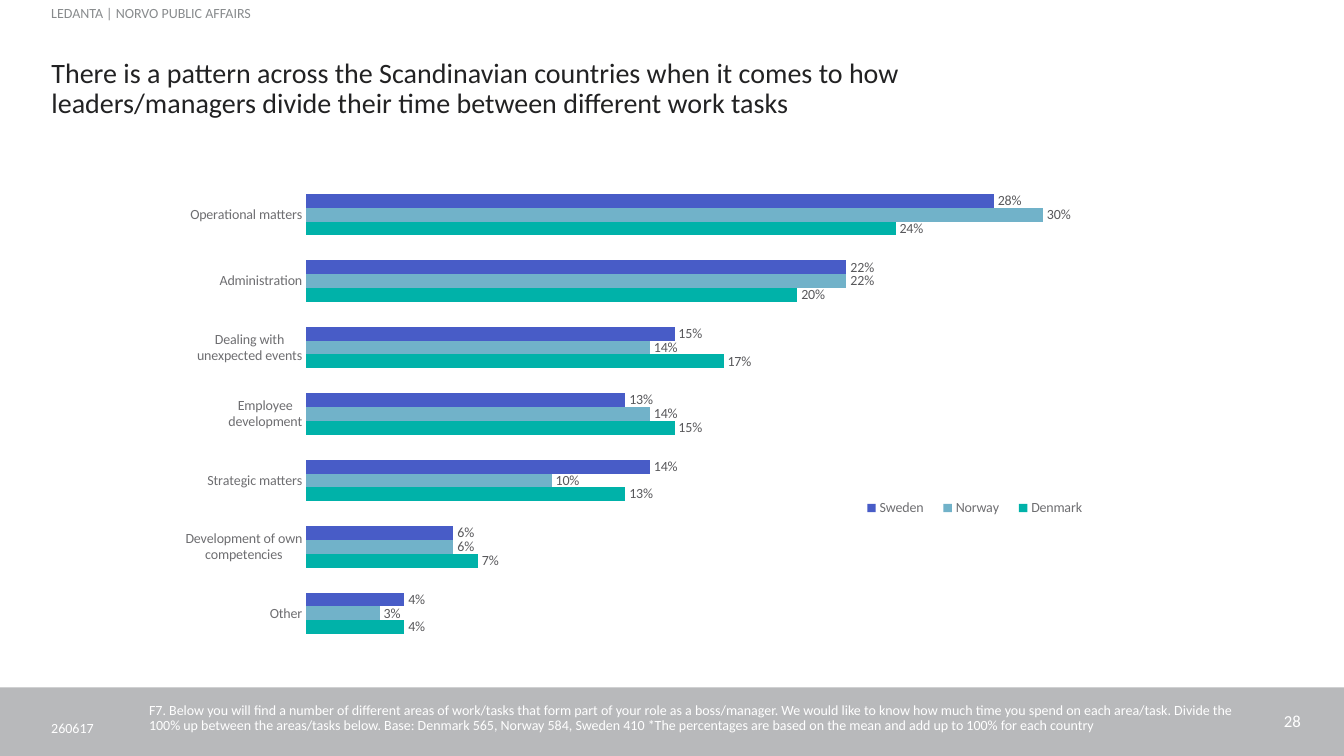
from dataclasses import dataclass

from lxml.etree import SubElement
from pptx import Presentation
from pptx.chart.data import CategoryChartData
from pptx.dml.color import RGBColor
from pptx.enum.chart import XL_CHART_TYPE, XL_LABEL_POSITION, XL_LEGEND_POSITION, XL_TICK_MARK
from pptx.enum.shapes import MSO_SHAPE
from pptx.enum.text import MSO_ANCHOR, PP_ALIGN
from pptx.oxml.ns import qn
from pptx.util import Inches, Pt

TITLE = ("There is a pattern across the Scandinavian countries when it comes to how "
         "leaders/managers divide their time between different work tasks")
NOTE = ("F7. Below you will find a number of different areas of work/tasks that form part of "
        "your role as a boss/manager. We would like to know how much time you spend on each "
        "area/task. Divide the 100% up between the areas/tasks below. Base: Denmark 565, "
        "Norway 584, Sweden 410 *The percentages are based on the mean and add up to 100% "
        "for each country")
HEADER = "LEDANTA | NORVO PUBLIC AFFAIRS"
DATE = "260617"
PAGE = "28"

TASKS = ["Other", "Development of own competencies", "Strategic matters",
         "Employee development", "Dealing with unexpected events",
         "Administration", "Operational matters"]
SHARES = {
    "Denmark": (0.04, 0.07, 0.13, 0.15, 0.17, 0.20, 0.24),
    "Norway": (0.03, 0.06, 0.10, 0.14, 0.14, 0.22, 0.30),
    "Sweden": (0.04, 0.06, 0.14, 0.13, 0.15, 0.22, 0.28),
}


@dataclass(frozen=True)
class Theme:
    font: str = "Calibri"
    dark: str = "222223"
    label: str = "58585B"
    axis: str = "6E6E71"
    head: str = "888B8D"
    band: str = "B8B9BB"
    white: str = "FFFFFF"
    bars: tuple = ("00B2A9", "71B2C9", "485CC7")
    small: int = 10
    page: int = 12
    title: int = 20


LOOK = Theme()


def color(code):
    return RGBColor.from_string(code)


def style(font, size, code):
    font.name = LOOK.font
    font.size = Pt(size)
    font.color.rgb = color(code)


def fill_text(shape, text, size, code, align=PP_ALIGN.LEFT, anchor=MSO_ANCHOR.TOP, space=1):
    frame = shape.text_frame
    frame.word_wrap = True
    frame.vertical_anchor = anchor
    frame.text = text
    para = frame.paragraphs[0]
    para.alignment = align
    para.line_spacing = space
    style(para.font, size, code)


def add_text(slide, box, *args, **kwargs):
    fill_text(slide.shapes.add_textbox(*map(Inches, box)), *args, **kwargs)


def set_layout(part, after, box, inner=False):
    """Place a chart part by fractions of the chart area."""
    for old in part.findall(qn("c:layout")):
        part.remove(old)
    layout = SubElement(part, qn("c:layout"))
    if after is None:
        part.insert(0, layout)
    else:
        part.find(qn(after)).addnext(layout)
    manual = SubElement(layout, qn("c:manualLayout"))
    rules = [("layoutTarget", "inner")] if inner else []
    rules += [("xMode", "edge"), ("yMode", "edge"), *zip("xywh", box)]
    for name, value in rules:
        SubElement(manual, qn(f"c:{name}")).set("val", str(value))


def add_bars(slide):
    data = CategoryChartData(number_format="0%")
    data.categories = TASKS
    for name, values in SHARES.items():
        data.add_series(name, values)
    box = map(Inches, (1.84, 1.19, 10.16, 5.5))
    chart = slide.shapes.add_chart(XL_CHART_TYPE.BAR_CLUSTERED, *box, data).chart
    style(chart.font, LOOK.small, LOOK.dark)
    chart.has_title = False

    plot = chart.plots[0]
    plot.gap_width = 182
    plot.overlap = 0
    plot.vary_by_categories = False
    for series, code in zip(plot.series, LOOK.bars):
        series.format.fill.solid()
        series.format.fill.fore_color.rgb = color(code)
        labels = series.data_labels
        labels.show_value = True
        labels.position = XL_LABEL_POSITION.OUTSIDE_END
        labels.number_format = "0%"
        labels.number_format_is_linked = False
        style(labels.font, LOOK.small, LOOK.label)

    tasks = chart.category_axis
    tasks.major_tick_mark = XL_TICK_MARK.NONE
    tasks.format.line.fill.background()
    style(tasks.tick_labels.font, LOOK.small, LOOK.axis)
    scale = chart.value_axis
    scale.minimum_scale = 0
    scale.maximum_scale = 0.35
    scale.has_major_gridlines = False
    scale.visible = False

    chart.has_legend = True
    legend = chart.legend
    legend.position = XL_LEGEND_POSITION.BOTTOM
    legend.include_in_layout = False
    style(legend.font, LOOK.small, LOOK.axis)
    root = chart.element
    set_layout(root.find(".//" + qn("c:plotArea")), None, (0.116, 0.111, 0.841, 0.839), True)
    set_layout(root.find(".//" + qn("c:legend")), "c:legendPos", (0.65, 0.67, 0.24, 0.06))


def main():
    deck = Presentation()
    deck.slide_width = Inches(13.33)
    deck.slide_height = Inches(7.5)
    slide = deck.slides.add_slide(deck.slide_layouts[5])

    band = slide.shapes.add_shape(MSO_SHAPE.RECTANGLE, 0, Inches(6.82),
                                  deck.slide_width, Inches(0.68))
    band.shadow.inherit = False
    band.fill.solid()
    band.fill.fore_color.rgb = color(LOOK.band)
    band.line.fill.background()

    title = slide.shapes.title
    title.left, title.top, title.width, title.height = map(Inches, (0.41, 0.58, 10.67, 0.61))
    fill_text(title, TITLE, LOOK.title, LOOK.dark, anchor=MSO_ANCHOR.MIDDLE, space=0.9)

    add_text(slide, (0.41, 0, 2.6, 0.27), HEADER, LOOK.small, LOOK.head)
    add_bars(slide)
    add_text(slide, (0.41, 7.09, 1.13, 0.27), DATE, LOOK.small, LOOK.white)
    add_text(slide, (1.38, 6.93, 11.09, 0.57), NOTE, LOOK.small, LOOK.white, space=0.9)
    add_text(slide, (11.87, 7, 1.13, 0.3), PAGE, LOOK.page, LOOK.white, PP_ALIGN.RIGHT)
    deck.save("out.pptx")


if __name__ == "__main__":
    main()
